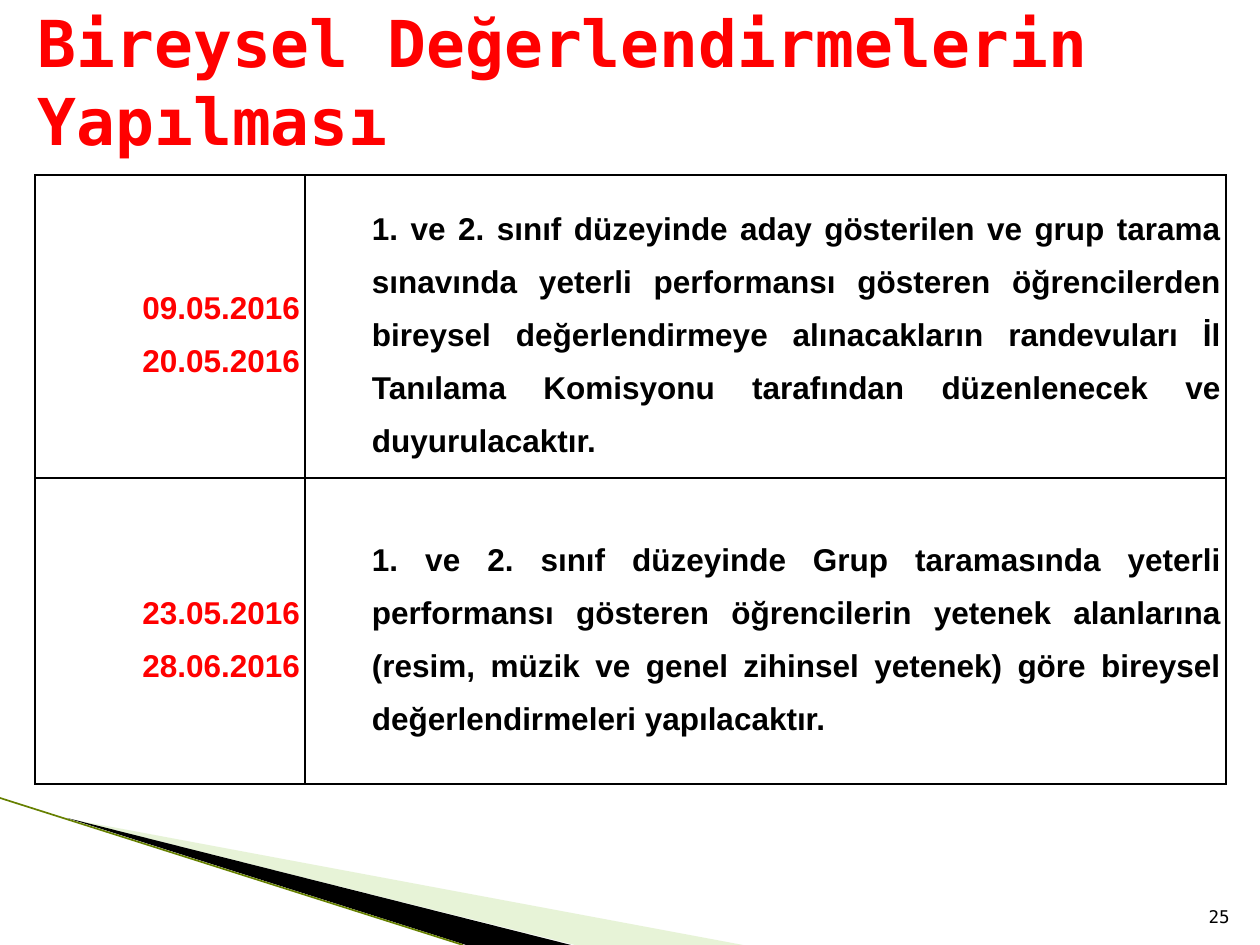
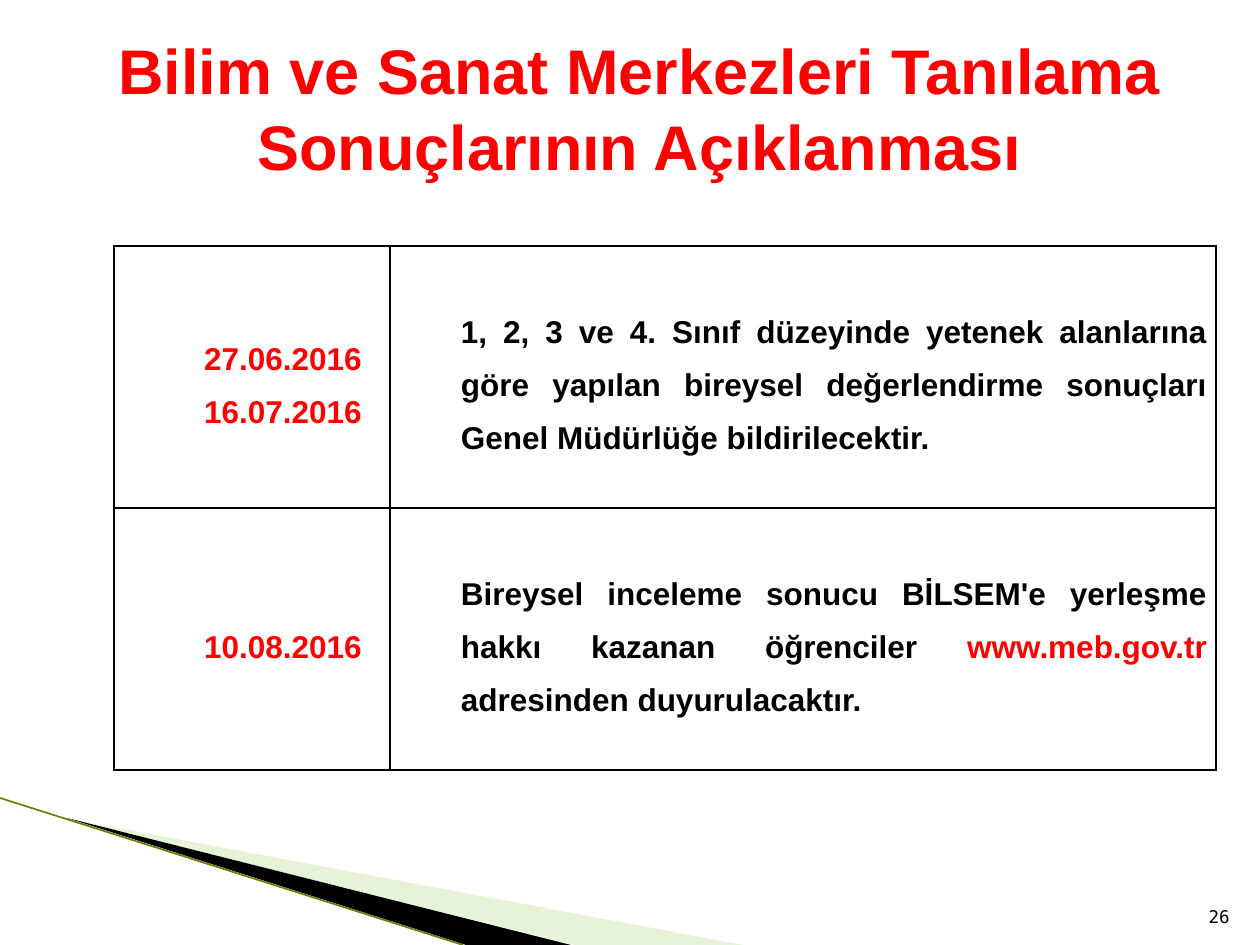
"""Build two slides with the dates of the individual assessments and results."""
from lxml.etree import SubElement
from pptx import Presentation
from pptx.dml.color import RGBColor
from pptx.enum.text import MSO_ANCHOR, MSO_AUTO_SIZE, PP_ALIGN
from pptx.oxml.ns import qn
from pptx.util import Emu, Pt

RED = RGBColor(0xFF, 0x00, 0x00)
BLACK = RGBColor(0x00, 0x00, 0x00)
LIME = RGBColor(0xC3, 0xE1, 0x9D)
OLIVE = RGBColor(0x66, 0x80, 0x00)
SANS = "Arial"
MONO = "DejaVu Sans Mono"
WIDE, HIGH = 1260, 945
INDENT = 62


def px(count):
    return Emu(round(count * 914400 / 126))


class Deck:
    def __init__(self):
        self.prs = Presentation()
        self.prs.slide_width, self.prs.slide_height = px(WIDE), px(HIGH)
        self.slide = None

    def page(self, number):
        self.slide = self.prs.slides.add_slide(self.prs.slide_layouts[5])
        self.wedge([(69, 819), (743, HIGH), (575, HIGH)], LIME, 40)
        self.wedge([(67, 818), (571, HIGH), (466, HIGH)], BLACK)
        self.line(0, 798, 463, HIGH)
        box = self.slide.shapes.add_textbox(px(1192), px(883), px(50), px(50))
        frame = box.text_frame
        frame.word_wrap = True
        frame.vertical_anchor = MSO_ANCHOR.BOTTOM
        self.text(frame.paragraphs[0], str(number), MONO, 10, BLACK,
                  PP_ALIGN.RIGHT, False)

    def text(self, para, text, face, size, color, align, bold=True):
        para.alignment = align
        font = para.font
        font.name, font.size, font.bold = face, Pt(size), bold
        font.color.rgb = color
        parts = [(text, color)] if isinstance(text, str) else text
        for words, tint in parts:
            run = para.add_run()
            run.text = words
            if tint != color:
                run.font.color.rgb = tint

    def wedge(self, points, color, alpha=100):
        pen = self.slide.shapes.build_freeform(*map(px, points[0]))
        pen.add_line_segments([(px(x), px(y)) for x, y in points[1:]])
        shape = pen.convert_to_shape()
        shape.shadow.inherit = False
        shape.line.fill.background()
        shape.fill.solid()
        shape.fill.fore_color.rgb = color
        if alpha < 100:
            tone = shape._element.spPr.find(".//" + qn("a:srgbClr"))
            SubElement(tone, qn("a:alpha"), val=str(alpha * 1000))

    def line(self, *ends):
        link = self.slide.shapes.add_connector(1, *map(px, ends))
        link.line.color.rgb = OLIVE
        link.line.width = Pt(0.95)
        SubElement(link._element.spPr, qn("a:effectLst"))

    def title(self, text, place, face, size, align, foot):
        shape = self.slide.shapes.title
        shape.left, shape.top, shape.width, shape.height = map(px, place)
        frame = shape.text_frame
        frame.auto_size = MSO_AUTO_SIZE.NONE
        frame.word_wrap = True
        frame.vertical_anchor = MSO_ANCHOR.BOTTOM
        frame.margin_bottom = px(foot)
        self.text(frame.paragraphs[0], text, face, size, RED, align)

    def table(self, left, top, cols, rows, data, side, align):
        frame = self.slide.shapes.add_table(
            len(rows), len(cols), px(left), px(top), px(sum(cols)), px(sum(rows)))
        grid = frame.table
        grid.first_row = grid.horz_banding = False
        for col, width in zip(grid.columns, cols):
            col.width = px(width)
        for row, height, (dates, text) in zip(grid.rows, rows, data):
            row.height = px(height)
            self.cell(row.cells[0], dates, RED, align, side)
            self.cell(row.cells[1], [text], BLACK, PP_ALIGN.JUSTIFY, side)

    def cell(self, cell, texts, color, align, side):
        cell.margin_left = cell.margin_right = px(side)
        cell.margin_top = cell.margin_bottom = 0
        cell.vertical_anchor = MSO_ANCHOR.MIDDLE
        frame = cell.text_frame
        for index, text in enumerate(texts):
            para = frame.add_paragraph() if index else frame.paragraphs[0]
            props = para._p.get_or_add_pPr()
            props.set("marL", str(px(INDENT)))
            props.set("indent", "0")
            para.line_spacing = 1.5
            self.text(para, text, SANS, 18, color, align)
        props = cell._tc.get_or_add_tcPr()
        for edge in "LRTB":
            line = SubElement(props, qn("a:ln" + edge), w=str(Pt(1)))
            fill = SubElement(line, qn("a:solidFill"))
            SubElement(fill, qn("a:srgbClr"), val=str(BLACK))
        cell.fill.background()


def main():
    deck = Deck()
    deck.page(25)
    deck.title("Bireysel Değerlendirmelerin Yapılması", (25, 38, 1235, 157),
               MONO, 36.9, PP_ALIGN.LEFT, 37)
    deck.table(35, 175, (270, 921), (303, 306), [
        (["09.05.2016", "20.05.2016"],
         "1. ve 2. sınıf düzeyinde aday gösterilen ve grup tarama sınavında "
         "yeterli performansı gösteren öğrencilerden bireysel değerlendirmeye "
         "alınacakların randevuları İl Tanılama Komisyonu tarafından "
         "düzenlenecek ve duyurulacaktır."),
        (["23.05.2016", "28.06.2016"],
         "1. ve 2. sınıf düzeyinde Grup taramasında yeterli performansı "
         "gösteren öğrencilerin yetenek alanlarına (resim, müzik ve genel "
         "zihinsel yetenek) göre bireysel değerlendirmeleri yapılacaktır."),
    ], 5, PP_ALIGN.RIGHT)

    deck.page(26)
    deck.title("Bilim ve Sanat Merkezleri Tanılama Sonuçlarının Açıklanması",
               (44, 21, 1191, 204), SANS, 36, PP_ALIGN.CENTER, 42)
    deck.table(114, 246, (276, 826), (262, 262), [
        (["27.06.2016", "16.07.2016"],
         "1, 2, 3 ve 4. Sınıf düzeyinde yetenek alanlarına göre yapılan "
         "bireysel değerlendirme sonuçları Genel Müdürlüğe bildirilecektir."),
        (["10.08.2016"],
         [("Bireysel inceleme sonucu BİLSEM'e yerleşme hakkı kazanan "
           "öğrenciler ", BLACK), ("www.meb.gov.tr", RED),
          (" adresinden duyurulacaktır.", BLACK)]),
    ], 9, PP_ALIGN.CENTER)
    deck.prs.save("out.pptx")


if __name__ == "__main__":
    main()
